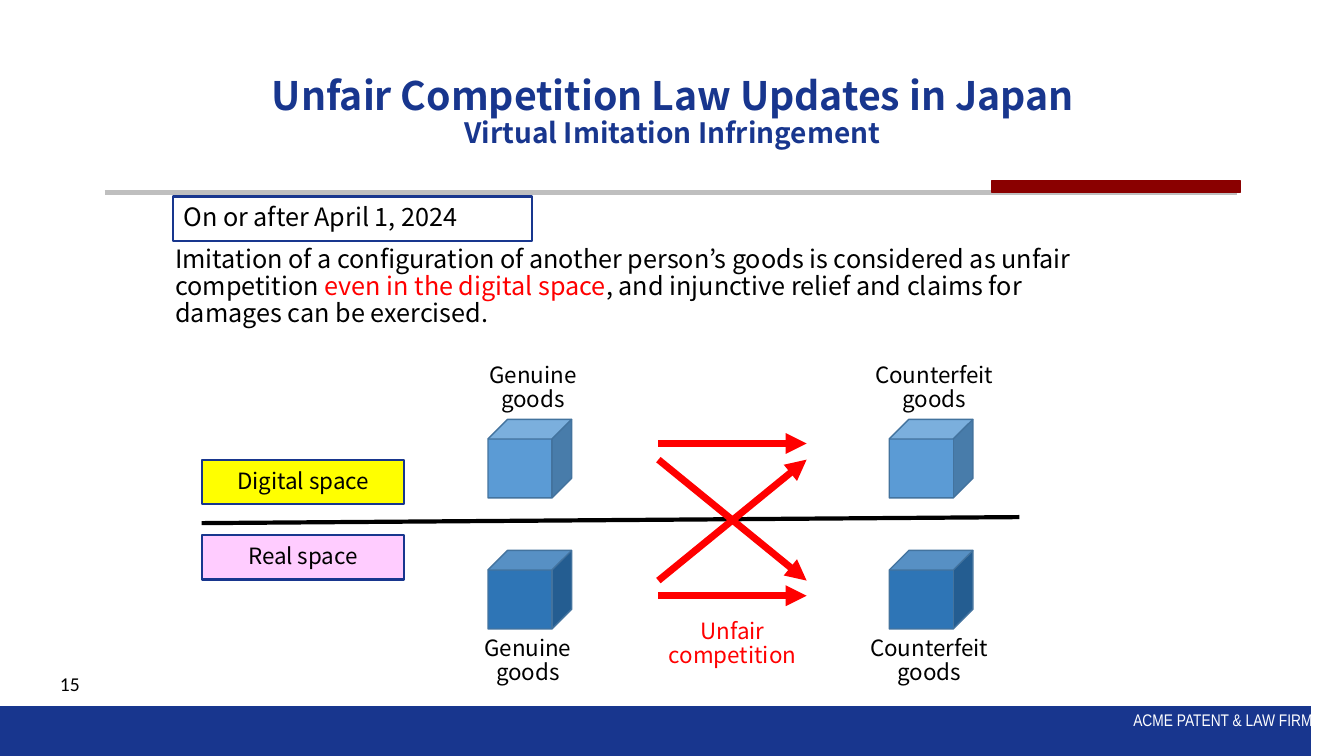
from lxml import etree
from pptx import Presentation
from pptx.dml.color import RGBColor
from pptx.enum.shapes import MSO_CONNECTOR as Connector, MSO_SHAPE as Preset
from pptx.enum.text import MSO_ANCHOR as Anchor, PP_ALIGN as Align
from pptx.oxml.ns import qn
from pptx.util import Inches, Pt

WIDTH, HEIGHT = 13.33, 7.5
BODY_FONT, TITLE_FONT = "Noto Sans CJK JP", "Noto Sans CJK SC"
COLORS = {
    "navy": "18368E", "pale navy": "AEB5D6", "maroon": "8A0000", "gray": "BFBFBF",
    "black": "000000", "white": "FFFFFF", "red": "FF0000", "yellow": "FFFF00",
    "pink": "FFCCFF", "digital": "5B9BD5", "real": "2E75B6", "cube edge": "43739E",
}


def color(name):
    return RGBColor.from_string(COLORS[name])


def inches(*lengths):
    return [Inches(length) for length in lengths]


def write(shape, paragraphs, size=16, font=BODY_FONT, align=Align.CENTER,
          anchor=Anchor.MIDDLE, spacing=0.9, bold=False):
    """Each paragraph is a list of (text, color name) runs."""
    frame = shape.text_frame
    frame.word_wrap = True
    frame.vertical_anchor = anchor
    for index, runs in enumerate(paragraphs):
        paragraph = frame.add_paragraph() if index else frame.paragraphs[0]
        for name, value in {"alignment": align, "line_spacing": spacing}.items():
            setattr(paragraph, name, value)
        for text, ink in runs:
            run = paragraph.add_run()
            run.text = text
            for name, value in {"name": font, "size": Pt(size), "bold": bold}.items():
                setattr(run.font, name, value)
            run.font.color.rgb = color(ink)


def add_text(slide, box, paragraphs, **style):
    write(slide.shapes.add_textbox(*inches(*box)), paragraphs, **style)


def paint(shape, fill=None, line=None, weight=1):
    shape.shadow.inherit = False
    if fill:
        shape.fill.solid()
        shape.fill.fore_color.rgb = color(fill)
    else:
        shape.fill.background()
    if line:
        shape.line.color.rgb = color(line)
        shape.line.width = Pt(weight)
    else:
        shape.line.fill.background()


def add_box(slide, preset, box, **look):
    shape = slide.shapes.add_shape(preset, *inches(*box))
    paint(shape, **look)
    return shape


def add_line(slide, start, end, ink, weight, arrow=False):
    line = slide.shapes.add_connector(Connector.STRAIGHT, *inches(*start, *end))
    line.line.color.rgb = color(ink)
    line.line.width = Pt(weight)
    if arrow:
        etree.SubElement(line.line._get_or_add_ln(), qn("a:tailEnd"), type="triangle")
    etree.SubElement(line._element.spPr, qn("a:effectLst"))


def add_footer(slide, box):
    left, top, width, height = box
    right, bottom = left + width, top + height
    # Two wedges rising to the same right-hand corner
    for share, fill in ((0.65, "pale navy"), (0.82, "navy")):
        builder = slide.shapes.build_freeform(right, top, scale=Inches(1))
        builder.add_line_segments(
            [(left, top + share * height), (left, bottom), (right, bottom)], close=True)
        paint(builder.convert_to_shape(), fill)
    add_text(slide, (left, top, 0.89, 0.76), [[("15", "black")]], size=14,
             font="Calibri", align=Align.RIGHT, anchor=Anchor.TOP, spacing=1)
    add_text(slide, (right - 2.56, top + 0.37, 2.72, 0.3),
             [[("ACME PATENT & LAW FIRM", "white")]], size=12,
             font="Arial Narrow", anchor=Anchor.TOP, spacing=1)


def add_header(slide, box):
    left, top, width, height = box
    title = slide.shapes.title
    for name, value in zip(("left", "top", "width", "height"), inches(*box)):
        setattr(title, name, value)
    write(title, [[("Unfair Competition Law Updates in Japan", "navy")]],
          size=28, font=TITLE_FONT, bold=True)
    paragraph = title.text_frame.paragraphs[0]
    paragraph.add_line_break()
    subtitle = paragraph.add_run()
    subtitle.text = "Virtual Imitation Infringement"
    for name, value in {"name": TITLE_FONT, "size": Pt(20), "bold": True}.items():
        setattr(subtitle.font, name, value)
    subtitle.font.color.rgb = color("navy")
    # Rule with its accent bar
    rule = top + height + 0.06
    add_line(slide, (left + 0.12, rule), (left + width - 0.15, rule), "gray", 3)
    add_box(slide, Preset.RECTANGLE, (left + width - 2.58, rule - 0.12, 2.46, 0.12),
            fill="maroon", line="maroon")


def add_statement(slide, box):
    left, top, width, height = box
    date = add_box(slide, Preset.RECTANGLE, (left + 0.08, top, 3.56, 0.44),
                   line="navy", weight=1.5)
    write(date, [[("On or after April 1, 2024", "black")]], size=18, align=Align.LEFT)
    add_text(slide, (left, top + 0.38, width, height - 0.38), [[
        ("Imitation of a configuration of another person’s goods is considered "
         "as unfair competition ", "black"),
        ("even in the digital space", "red"),
        (", and injunctive relief and claims for damages can be exercised.", "black"),
    ]], size=18, align=Align.LEFT)


def add_diagram(slide, box):
    left, top, width, height = box
    middle = top + 1.62
    # Boundary between the two spaces
    add_line(slide, (left, middle + 0.03), (left + width, middle - 0.03), "black", 3)
    for offset, text, fill in ((-0.6, "Digital space", "yellow"),
                               (0.15, "Real space", "pink")):
        space = add_box(slide, Preset.RECTANGLE, (left, middle + offset, 2.01, 0.44),
                        fill=fill, line="navy", weight=1.5)
        write(space, [[(text, "black")]])
    # Goods: one column per kind, one row per space
    for column, kind in enumerate(("Genuine", "Counterfeit")):
        cube_left = left + 2.84 + column * 3.98
        for row, fill in enumerate(("digital", "real")):
            add_box(slide, Preset.CUBE, (cube_left, top + 0.62 + row * 1.3, 0.83, 0.78),
                    fill=fill, line="cube edge")
            label_top = top + row * (height - 0.62)
            add_text(slide, (cube_left - 0.45 - row * 0.05, label_top, 1.79, 0.62),
                     [[(kind, "black")], [("goods", "black")]])
    # Imitation paths, straight and crossing
    for start, end in ((0.86, 0.86), (2.37, 2.37), (2.22, 1.02), (1.02, 2.22)):
        add_line(slide, (left + 4.53, top + start), (left + 6, top + end), "red", 5, True)
    add_text(slide, (left + 4.37, top + 2.54, 1.79, 0.62), [[("Unfair competition", "red")]])


def main():
    presentation = Presentation()
    presentation.slide_width, presentation.slide_height = inches(WIDTH, HEIGHT)
    slide = presentation.slides.add_slide(presentation.slide_layouts[5])
    add_footer(slide, (0, HEIGHT - 0.88, WIDTH, 0.88))
    add_header(slide, (0.92, 0.4, 11.5, 1.45))
    add_statement(slide, (1.64, 1.95, 9.34, 1.42))
    add_diagram(slide, (2, 3.54, 8.11, 3.33))
    presentation.save("out.pptx")


if __name__ == "__main__":
    main()
